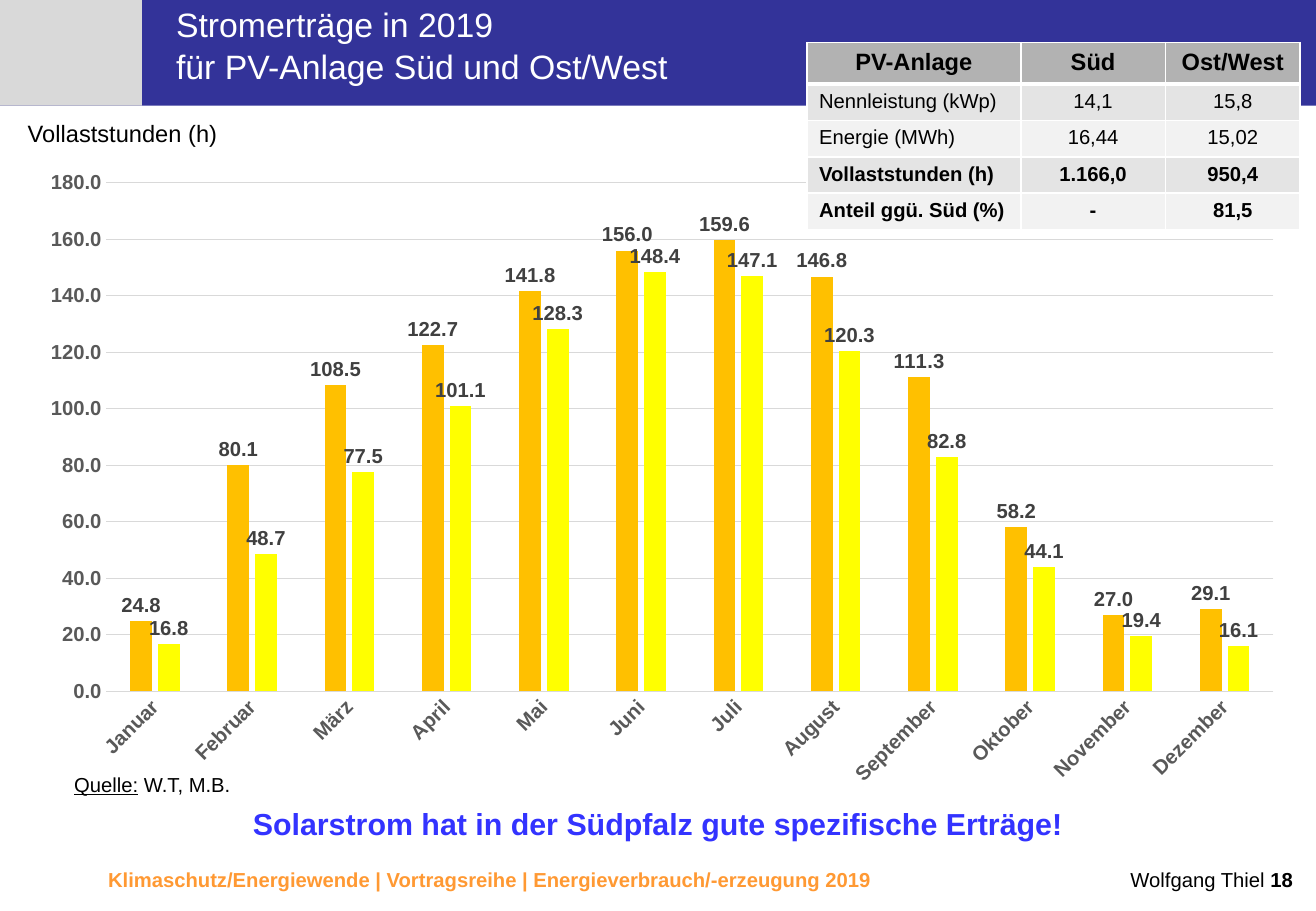
from lxml import etree
from pptx import Presentation
from pptx import util as u
from pptx.chart import data as chart_data
from pptx.dml.color import RGBColor
from pptx.enum import chart as charts, shapes, text
from pptx.oxml import ns

WHITE = RGBColor(0xFF, 0xFF, 0xFF)
BLACK = RGBColor(0, 0, 0)
NAVY = RGBColor(0x33, 0x33, 0x99)
BLUE = RGBColor(0x33, 0x33, 0xFF)
FOOTER_ORANGE = RGBColor(0xFF, 0x99, 0x33)
AMBER = RGBColor(0xFF, 0xC0, 0x00)
YELLOW = RGBColor(0xFF, 0xFF, 0x00)
LIGHT_GREY = RGBColor(0xD9, 0xD9, 0xD9)
AXIS_GREY = RGBColor(0x59, 0x59, 0x59)
LABEL_GREY = RGBColor(0x40, 0x40, 0x40)
HEADER_GREY = RGBColor(0xB2, 0xB2, 0xB2)
BANDS = (RGBColor(0xE4, 0xE4, 0xE4), RGBColor(0xF2, 0xF2, 0xF2))
LEFT, CENTER, RIGHT = text.PP_ALIGN.LEFT, text.PP_ALIGN.CENTER, text.PP_ALIGN.RIGHT
NUMBER_FORMAT = "#,##0.0"

MONTHS = ("Januar", "Februar", "März", "April", "Mai", "Juni", "Juli",
          "August", "September", "Oktober", "November", "Dezember")
YIELDS = (
    ("Süd", AMBER, (24.8, 80.1, 108.5, 122.7, 141.8, 156.0,
                    159.6, 146.8, 111.3, 58.2, 27.0, 29.1)),
    ("Ost/West", YELLOW, (16.8, 48.7, 77.5, 101.1, 128.3, 148.4,
                          147.1, 120.3, 82.8, 44.1, 19.4, 16.1)),
)
PLANTS = (
    ("PV-Anlage", "Süd", "Ost/West"),
    ("Nennleistung (kWp)", "14,1", "15,8"),
    ("Energie (MWh)", "16,44", "15,02"),
    ("Vollaststunden (h)", "1.166,0", "950,4"),
    ("Anteil ggü. Süd (%)", "-", "81,5"),
)


def set_font(font, size=12, color=BLACK, bold=False, underline=False):
    font.name = "Arial"
    font.size = u.Pt(size)
    font.color.rgb = color
    font.bold = bold
    if underline:
        font.underline = True


def write(para, words, align=LEFT, spacing=None, **style):
    para.alignment = align
    if spacing:
        para.line_spacing = spacing
    for index, line in enumerate(words.split("\n")):
        if index:
            para.add_line_break()
        span = para.add_run()
        span.text = line
        set_font(span.font, **style)


def border(cell, side, width):
    props = cell._tc.get_or_add_tcPr()
    line = etree.SubElement(props, ns.qn("a:" + side), w=str(u.Pt(width)))
    fill = etree.SubElement(line, ns.qn("a:solidFill"))
    etree.SubElement(fill, ns.qn("a:srgbClr"), val=str(WHITE))


class SlideBuilder:
    def __init__(self, page):
        self.page = page

    def bar(self, left, top, width, height, color):
        box = self.page.shapes.add_shape(
            shapes.MSO_SHAPE.RECTANGLE, *map(u.Cm, (left, top, width, height)))
        box.shadow.inherit = False
        box.fill.solid()
        box.fill.fore_color.rgb = color
        box.line.fill.background()

    def frame(self, box, margins, wrap):
        frame = box.text_frame
        frame.word_wrap = wrap
        frame.auto_size = text.MSO_AUTO_SIZE.NONE
        frame.vertical_anchor = text.MSO_ANCHOR.TOP
        frame.margin_left = frame.margin_right = u.Cm(margins[0])
        frame.margin_top = frame.margin_bottom = u.Cm(margins[1])
        return frame.paragraphs[0]

    def title(self, words, left, top, width, height, **style):
        box = self.page.shapes.title
        box.left, box.top, box.width, box.height = map(u.Cm, (left, top, width, height))
        self.page.shapes._spTree.append(box._element)
        write(self.frame(box, (0, 0), True), words, **style)

    def label(self, words, left, top, width, height, margins=(0.25, 0.13), wrap=True, **style):
        box = self.page.shapes.add_textbox(*map(u.Cm, (left, top, width, height)))
        para = self.frame(box, margins, wrap)
        write(para, words, **style)
        return para

    def column_chart(self, months, yields, left, top, width, height):
        values = chart_data.CategoryChartData(number_format=NUMBER_FORMAT)
        values.categories = months
        for name, _, numbers in yields:
            values.add_series(name, numbers)
        chart = self.page.shapes.add_chart(
            charts.XL_CHART_TYPE.COLUMN_CLUSTERED,
            *map(u.Cm, (left, top, width, height)), values).chart
        set_font(chart.font, size=10)
        chart.has_legend = chart.has_title = False
        plot = chart.plots[0]
        plot.gap_width, plot.overlap = 219, -27
        plot.vary_by_categories = False
        for series, (_, color, _) in zip(plot.series, yields):
            series.format.fill.solid()
            series.format.fill.fore_color.rgb = color
            series.invert_if_negative = False
            labels = series.data_labels
            labels.show_value = True
            labels.position = charts.XL_LABEL_POSITION.OUTSIDE_END
            labels.number_format = NUMBER_FORMAT
            labels.number_format_is_linked = False
            set_font(labels.font, color=LABEL_GREY, bold=True)
        for axis in (chart.category_axis, chart.value_axis):
            axis.major_tick_mark = axis.minor_tick_mark = charts.XL_TICK_MARK.NONE
            set_font(axis.tick_labels.font, color=AXIS_GREY, bold=True)
        months_axis, hours_axis = chart.category_axis, chart.value_axis
        months_axis._element.txPr.bodyPr.set("rot", "-2700000")
        hours_axis.minimum_scale, hours_axis.maximum_scale = 0, 180
        hours_axis.major_unit = 20
        hours_axis.tick_labels.number_format = NUMBER_FORMAT
        hours_axis.tick_labels.number_format_is_linked = False
        hours_axis.format.line.fill.background()
        for line in (months_axis.format.line, hours_axis.major_gridlines.format.line):
            line.color.rgb = LIGHT_GREY
            line.width = u.Pt(0.75)

    def table(self, rows, left, top, widths, heights):
        table = self.page.shapes.add_table(
            len(rows), len(widths),
            *map(u.Cm, (left, top, sum(widths), sum(heights)))).table
        for column, width in zip(table.columns, widths):
            column.width = u.Cm(width)
        for r, (row, height) in enumerate(zip(rows, heights)):
            table.rows[r].height = u.Cm(height)
            for c, words in enumerate(row):
                cell = table.cell(r, c)
                for side in ("lnL", "lnR", "lnT", "lnB"):
                    heavy = (r, side) in ((0, "lnB"), (1, "lnT"))
                    border(cell, side, 3 if heavy else 1)
                cell.fill.solid()
                cell.fill.fore_color.rgb = BANDS[(r - 1) % 2] if r else HEADER_GREY
                write(cell.text_frame.paragraphs[0], words,
                      align=LEFT if r and not c else CENTER,
                      size=12 if r else 14, bold=r in (0, 3, 4))


def main():
    deck = Presentation()
    deck.slide_width, deck.slide_height = u.Cm(27.51), u.Cm(19.05)
    build = SlideBuilder(deck.slides.add_slide(deck.slide_layouts[5]))

    build.bar(-0.03, 0, 27.54, 2.21, NAVY)
    build.label("Klimaschutz/Energiewende | Vortragsreihe | Energieverbrauch/-erzeugung 2019",
                2.01, 18.01, 16.76, 0.76, color=FOOTER_ORANGE, bold=True)
    author = build.label("Wolfgang Thiel ", 20.35, 18.06, 6.93, 0.71,
                         align=RIGHT, spacing=0.9)
    write(author, "18", align=RIGHT, bold=True)
    build.bar(-0.03, 0, 3, 2.21, LIGHT_GREY)

    build.column_chart(MONTHS, YIELDS, 0.53, 3.33, 26.62, 13.36)
    build.title("Stromerträge in 2019\nfür PV-Anlage Süd und Ost/West",
                3.68, 0.03, 20.73, 1.7, size=20, color=WHITE, spacing=1.05)
    source = build.label("Quelle:", 1.55, 16.15, 3.43, 0.51, margins=(0, 0),
                         wrap=False, underline=True)
    write(source, " W.T, M.B.")
    build.label("Vollaststunden (h)", 0.33, 2.36, 4.5, 0.86, wrap=False, size=14)
    build.table(PLANTS, 16.87, 0.89, (4.47, 3.02, 2.82), (0.87,) + (0.76,) * 4)
    build.label("Solarstrom hat in der Südpfalz gute spezifische Erträge!",
                0, 16.66, 27.51, 1.12, margins=(0.18, 0.18),
                align=CENTER, size=18, color=BLUE, bold=True)
    deck.save("out.pptx")


if __name__ == "__main__":
    main()
